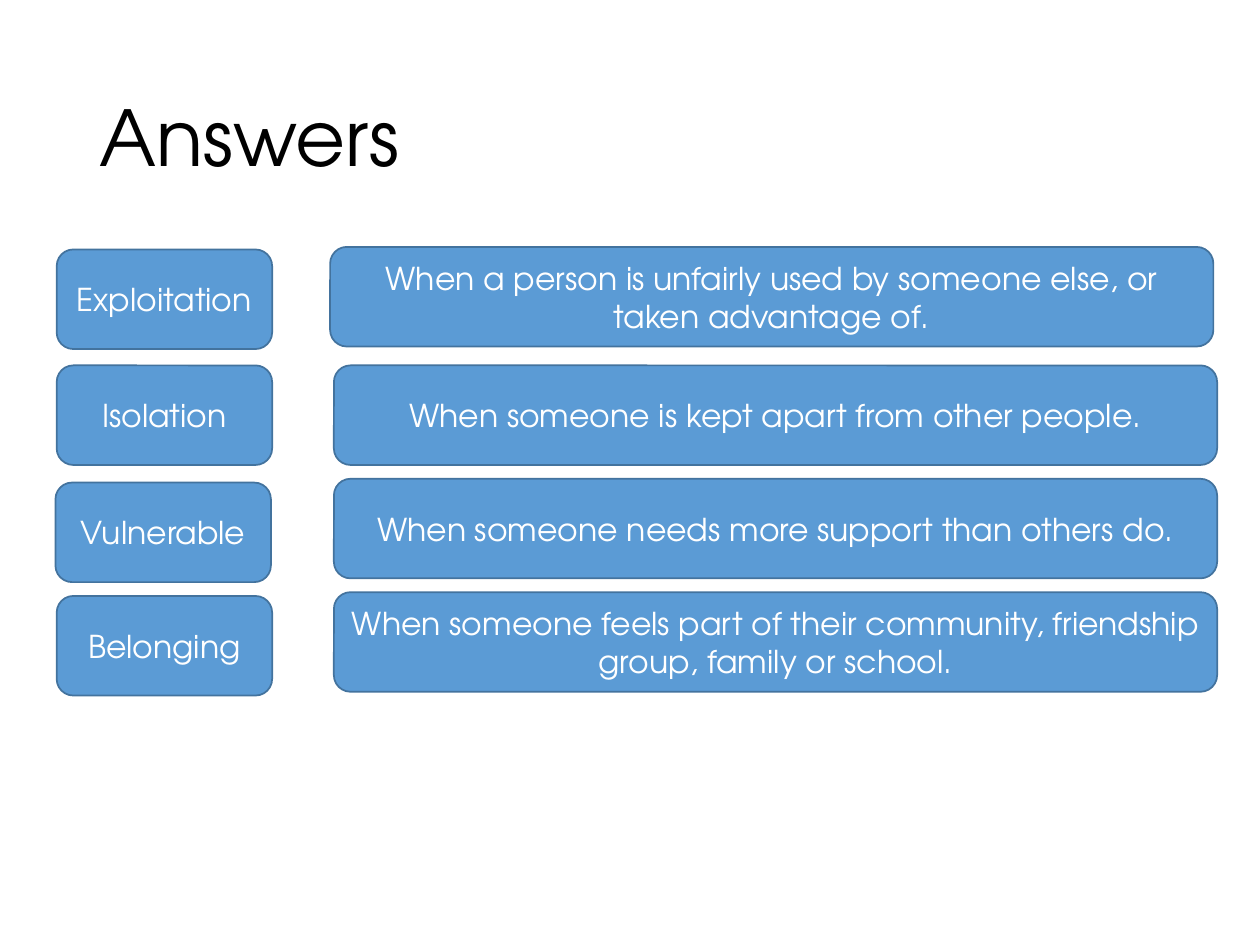
from pptx import Presentation
from pptx.dml.color import RGBColor
from pptx.enum import shapes, text
from pptx.util import Inches, Pt

FONT = "TeX Gyre Adventor"
COLORS = {"ink": "000000", "fill": "5B9BD5", "edge": "43739E", "pale": "FFFFFF"}
WIDE, HIGH = 10, 7.5
CARD = 0.79
TERM, SENSE = 1.71, 7.01
ROWS = [
    ("Exploitation", 0.45, 1.98,
     "When a person is unfairly used by someone else, or taken advantage of.", 2.62, 1.96),
    ("Isolation", 0.45, 2.9,
     "When someone is kept apart from other people.", 2.65, 2.9),
    ("Vulnerable", 0.44, 3.83,
     "When someone needs more support than others do.", 2.65, 3.8),
    ("Belonging", 0.45, 4.73,
     "When someone feels part of their community, friendship group, family or school.", 2.65, 4.7),
]


def color(name):
    return RGBColor.from_string(COLORS[name])


def write(shape, words, size=18, ink="pale", align=text.PP_ALIGN.CENTER, space=1.0):
    frame = shape.text_frame
    frame.word_wrap = True
    frame.vertical_anchor = text.MSO_ANCHOR.MIDDLE
    para = frame.paragraphs[0]
    para.alignment = align
    para.line_spacing = space
    run = para.add_run()
    run.text = words
    run.font.name = FONT
    run.font.size = Pt(size)
    run.font.color.rgb = color(ink)


def title(slide, words):
    box = slide.shapes.add_textbox(
        *map(Inches, (0.069 * WIDE, 0.053 * HIGH, 0.862 * WIDE, 0.193 * HIGH)))
    write(box, words, size=44, ink="ink", align=text.PP_ALIGN.LEFT, space=0.9)


def card(slide, words, left, top, width):
    box = slide.shapes.add_shape(
        shapes.MSO_SHAPE.ROUNDED_RECTANGLE, *map(Inches, (left, top, width, CARD)))
    box.shadow.inherit = False
    box.fill.solid()
    box.fill.fore_color.rgb = color("fill")
    box.line.color.rgb = color("edge")
    box.line.width = Pt(1)
    write(box, words)


def main():
    deck = Presentation()
    deck.slide_width, deck.slide_height = Inches(WIDE), Inches(HIGH)
    slide = deck.slides.add_slide(deck.slide_layouts[6])
    title(slide, "Answers")
    for term, left, top, sense, start, level in ROWS:
        card(slide, term, left, top, TERM)
        card(slide, sense, start, level, SENSE)
    deck.save("out.pptx")


if __name__ == "__main__":
    main()
